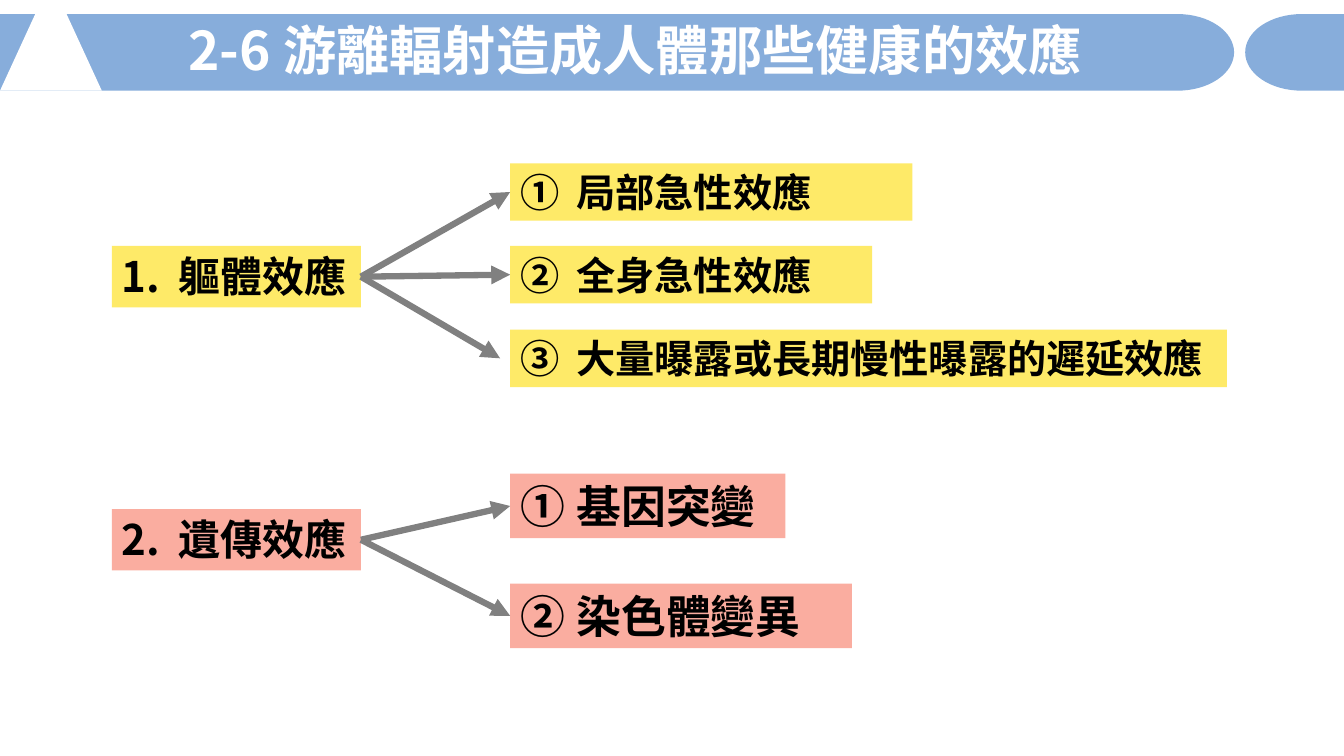
from dataclasses import dataclass
from math import cos, pi, sin

from lxml.etree import SubElement
from pptx import Presentation
from pptx.dml.color import RGBColor
from pptx.enum.shapes import MSO_CONNECTOR, MSO_SHAPE
from pptx.enum.text import MSO_ANCHOR, MSO_AUTO_SIZE, PP_ALIGN
from pptx.oxml.ns import qn
from pptx.util import Inches, Pt


@dataclass(frozen=True)
class Theme:
    """Colours, font and type sizes of the slide."""

    font: str = "Noto Sans CJK SC"
    band: RGBColor = RGBColor(0x87, 0xAD, 0xDB)
    white: RGBColor = RGBColor(0xFF, 0xFF, 0xFF)
    black: RGBColor = RGBColor(0, 0, 0)
    somatic: RGBColor = RGBColor(0xFE, 0xEA, 0x68)
    genetic: RGBColor = RGBColor(0xFA, 0xAD, 0xA0)
    arrow: RGBColor = RGBColor(0x80, 0x80, 0x80)
    title_size: int = 38
    cause_size: int = 30
    somatic_size: int = 28
    genetic_size: int = 32
    arrow_width: float = 4.5


THEME = Theme()
BAND_TOP, BAND_HEIGHT, BAND_CURVE = 0.14, 0.76, 0.56
CAUSE_LEFT, EFFECT_LEFT = 1.11, 5.06
INDENT = 0.56


def paint(shape, color):
    """Give a shape a flat fill without line or shadow."""
    shape.fill.solid()
    shape.fill.fore_color.rgb = color
    shape.line.fill.background()
    shape.shadow.inherit = False


def format_text(paragraph, size, color):
    """Set the bold Latin and East Asian font of a paragraph's runs."""
    paragraph.alignment = PP_ALIGN.LEFT
    for run in paragraph.runs:
        run.font.name = THEME.font
        run.font.size = Pt(size)
        run.font.bold = True
        run.font.color.rgb = color
        east_asian = SubElement(run.font._element, qn("a:ea"))
        east_asian.set("typeface", THEME.font)


def add_band(slide, flat_x, round_x):
    """Draw a header band with a straight end and an elliptical end."""
    direction = 1 if round_x > flat_x else -1
    center_x = round_x - direction * BAND_CURVE
    radius = BAND_HEIGHT / 2
    steps = 32
    angles = [-pi / 2 + pi * step / steps for step in range(steps + 1)]
    points = [
        (Inches(center_x + direction * BAND_CURVE * cos(angle)),
         Inches(BAND_TOP + radius + radius * sin(angle)))
        for angle in angles
    ]
    points.append((Inches(flat_x), Inches(BAND_TOP + BAND_HEIGHT)))
    builder = slide.shapes.build_freeform(Inches(flat_x), Inches(BAND_TOP))
    builder.add_line_segments(points, close=True)
    paint(builder.convert_to_shape(), THEME.band)


def add_emblem(slide):
    """Place a plain shape at the left end of the header."""
    shape = slide.shapes.add_shape(
        MSO_SHAPE.TRAPEZOID, Inches(0), Inches(BAND_TOP), Inches(1.01), Inches(BAND_HEIGHT)
    )
    shape.adjustments[0] = 0.46
    paint(shape, THEME.white)


def set_title(slide, text):
    """Write the title on top of the header band."""
    title = slide.shapes.title
    title.left, title.top = Inches(1.77), Inches(0.2)
    title.width, title.height = Inches(9.92), Inches(0.65)
    frame = title.text_frame
    frame.text = text
    frame.auto_size = MSO_AUTO_SIZE.NONE
    frame.vertical_anchor = MSO_ANCHOR.MIDDLE
    paragraph = frame.paragraphs[0]
    paragraph.line_spacing = 0.9
    format_text(paragraph, THEME.title_size, THEME.white)
    slide.shapes._spTree.append(title._element)


def add_numbered_box(slide, text, number, scheme, box, size, color):
    """Add a filled box holding one automatically numbered item."""
    shape = slide.shapes.add_shape(MSO_SHAPE.RECTANGLE, *map(Inches, box))
    paint(shape, color)
    frame = shape.text_frame
    frame.text = text
    frame.word_wrap = True
    frame.auto_size = MSO_AUTO_SIZE.SHAPE_TO_FIT_TEXT
    frame.vertical_anchor = MSO_ANCHOR.TOP
    paragraph = frame.paragraphs[0]
    format_text(paragraph, size, THEME.black)
    properties = paragraph._p.get_or_add_pPr()
    properties.set("marL", str(Inches(INDENT)))
    properties.set("indent", str(-Inches(INDENT)))
    bullet = SubElement(properties, qn("a:buAutoNum"))
    bullet.set("type", scheme)
    if number > 1:
        bullet.set("startAt", str(number))
    return shape


def add_arrow(slide, cause, effect, gap):
    """Draw an arrow from a cause to an effect, joined unless a gap is left."""
    connector = slide.shapes.add_connector(
        MSO_CONNECTOR.STRAIGHT,
        cause.left + cause.width, cause.top + cause.height // 2,
        effect.left - Inches(gap), effect.top + effect.height // 2,
    )
    connector.begin_connect(cause, 3)
    if not gap:
        connector.end_connect(effect, 1)
    connector.line.color.rgb = THEME.arrow
    connector.line.width = Pt(THEME.arrow_width)
    SubElement(connector.line._get_or_add_ln(), qn("a:tailEnd")).set("type", "triangle")
    SubElement(connector._element.spPr, qn("a:effectLst"))


def add_branch(slide, number, cause_text, cause_top, effects, height, size, color):
    """Add a cause, its numbered effects and the arrows between them."""
    cause = add_numbered_box(
        slide, cause_text, number, "arabicPeriod",
        (CAUSE_LEFT, cause_top, 2.47, 0.61), THEME.cause_size, color,
    )
    for index, (text, top, width, gap) in enumerate(effects, start=1):
        effect = add_numbered_box(
            slide, text, index, "circleNumWdWhitePlain",
            (EFFECT_LEFT, top, width, height), size, color,
        )
        add_arrow(slide, cause, effect, gap)


def main():
    """Build the slide and save it."""
    presentation = Presentation()
    presentation.slide_width, presentation.slide_height = Inches(13.33), Inches(7.5)
    slide = presentation.slides.add_slide(presentation.slide_layouts[5])
    add_band(slide, 0, 12.24)
    add_emblem(slide)
    add_band(slide, 13.33, 12.35)
    set_title(slide, "2-6 游離輻射造成人體那些健康的效應")
    somatic_effects = [
        ("局部急性效應", 1.62, 3.99, 0),
        ("全身急性效應", 2.44, 3.59, 0),
        ("大量曝露或長期慢性曝露的遲延效應", 3.27, 7.11, 0.1),
    ]
    genetic_effects = [("基因突變", 4.7, 2.73, 0), ("染色體變異", 5.79, 3.39, 0)]
    add_branch(slide, 1, "軀體效應", 2.44, somatic_effects, 0.57,
               THEME.somatic_size, THEME.somatic)
    add_branch(slide, 2, "遺傳效應", 5.05, genetic_effects, 0.64,
               THEME.genetic_size, THEME.genetic)
    presentation.save("out.pptx")


if __name__ == "__main__":
    main()
